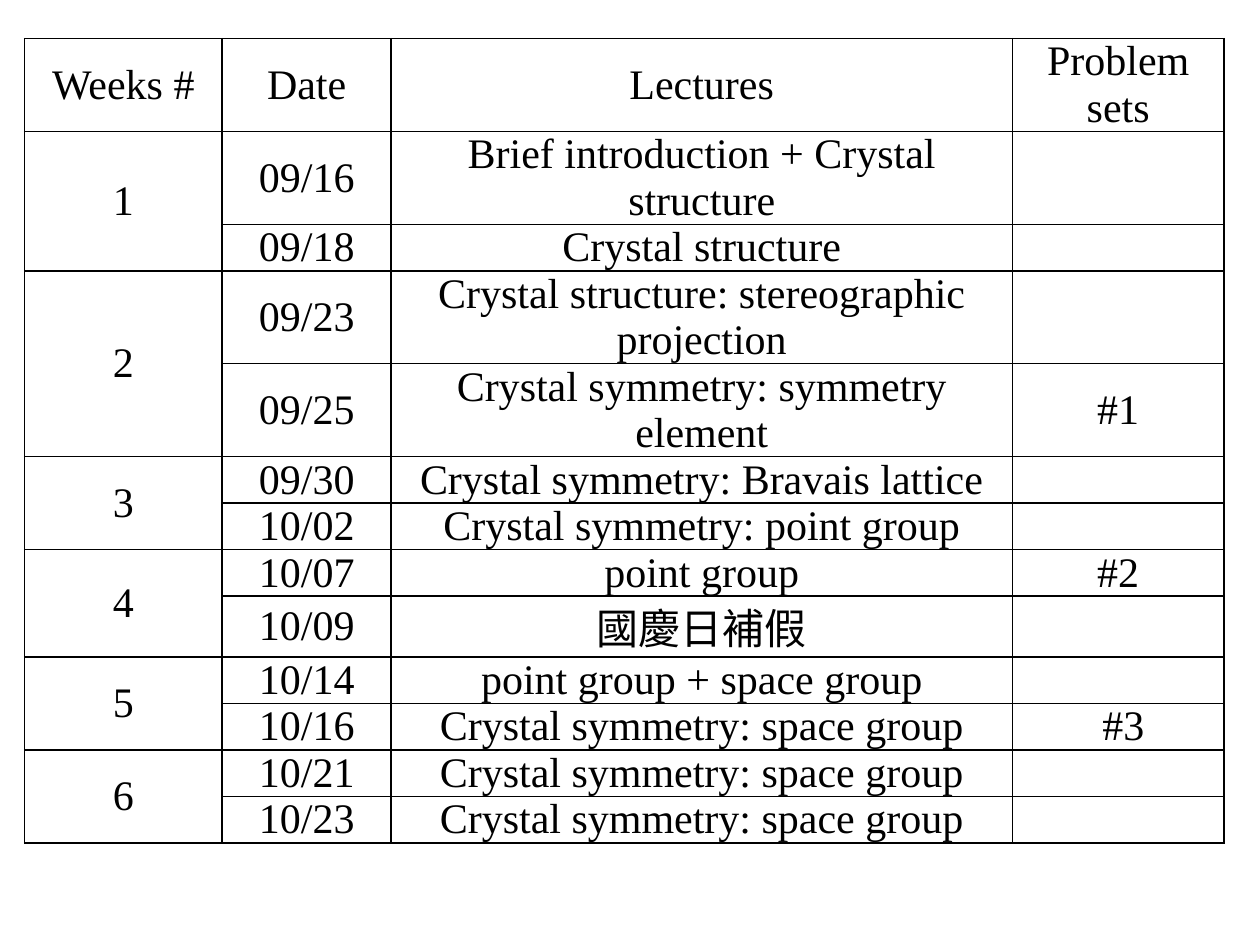
from lxml.etree import SubElement
from pptx import Presentation
from pptx.dml.color import RGBColor
from pptx.enum.text import MSO_ANCHOR, PP_ALIGN
from pptx.oxml.ns import qn
from pptx.util import Pt

COLUMN_WIDTHS = [113, 96.5, 355, 121]
LINE_HEIGHT = 26.5
HOLIDAY_HEIGHT = 34
HEADINGS = ["Weeks #", "Date", "Lectures", "Problem sets"]

# One entry a lecture: date, topic, problem set, lines of text. Two lectures a week.
LECTURES = [
    ("09/16", "Brief introduction + Crystal structure", "", 2),
    ("09/18", "Crystal structure", "", 1),
    ("09/23", "Crystal structure: stereographic projection", "", 2),
    ("09/25", "Crystal symmetry: symmetry element", "#1", 2),
    ("09/30", "Crystal symmetry: Bravais lattice", "", 1),
    ("10/02", "Crystal symmetry: point group", "", 1),
    ("10/07", "point group", "#2", 1),
    ("10/09", "國慶日補假", "", HOLIDAY_HEIGHT / LINE_HEIGHT),
    ("10/14", "point group + space group", "", 1),
    ("10/16", "Crystal symmetry: space group", " #3", 1),
    ("10/21", "Crystal symmetry: space group", "", 1),
    ("10/23", "Crystal symmetry: space group", "", 1),
]
LECTURES_PER_WEEK = 2


def color(hex_value):
    return RGBColor.from_string(hex_value)


class SlideBuilder:
    ink = "000000"
    border_width = 1
    font_format = {"name": "Times New Roman", "size": Pt(24), "bold": False}
    cell_format = {
        "margin_left": Pt(1.5),
        "margin_right": Pt(1.5),
        "margin_top": 0,
        "margin_bottom": 0,
        "vertical_anchor": MSO_ANCHOR.MIDDLE,
    }

    def __init__(self, slide):
        self.slide = slide

    def add_table(self, left, top, widths, heights):
        frame = self.slide.shapes.add_table(
            len(heights), len(widths), Pt(left), Pt(top), Pt(sum(widths)), Pt(sum(heights))
        )
        table = frame.table
        table.first_row = table.horz_banding = False
        for column, width in zip(table.columns, widths):
            column.width = Pt(width)
        for row, height in zip(table.rows, heights):
            row.height = Pt(height)
        for cell in table.iter_cells():
            self.style_cell(cell)
        return table

    def style_cell(self, cell):
        for name, value in self.cell_format.items():
            setattr(cell, name, value)
        properties = cell._tc.get_or_add_tcPr()
        for side in ("lnL", "lnR", "lnT", "lnB"):
            line = SubElement(properties, qn(f"a:{side}"), w=str(Pt(self.border_width)))
            fill = SubElement(line, qn("a:solidFill"))
            SubElement(fill, qn("a:srgbClr"), val=self.ink)
        cell.fill.background()

    def write_cell(self, cell, text):
        para = cell.text_frame.paragraphs[0]
        para.alignment = PP_ALIGN.CENTER
        if not text:
            return
        span = para.add_run()
        span.text = text
        for name, value in self.font_format.items():
            setattr(span.font, name, value)
        span.font.color.rgb = color(self.ink)


def main():
    deck = Presentation()
    deck.slide_width, deck.slide_height = Pt(720), Pt(540)
    builder = SlideBuilder(deck.slides.add_slide(deck.slide_layouts[6]))

    heights = [2 * LINE_HEIGHT] + [LINE_HEIGHT * lines for *_, lines in LECTURES]
    table = builder.add_table(14, 22, COLUMN_WIDTHS, heights)

    for column, heading in enumerate(HEADINGS):
        builder.write_cell(table.cell(0, column), heading)
    for index, (*texts, _) in enumerate(LECTURES):
        row = index + 1
        week, position = divmod(index, LECTURES_PER_WEEK)
        if position == 0:
            week_cell = table.cell(row, 0)
            week_cell.merge(table.cell(row + LECTURES_PER_WEEK - 1, 0))
            builder.write_cell(week_cell, str(week + 1))
        for column, text in enumerate(texts, start=1):
            builder.write_cell(table.cell(row, column), text)

    deck.save("out.pptx")


if __name__ == "__main__":
    main()
